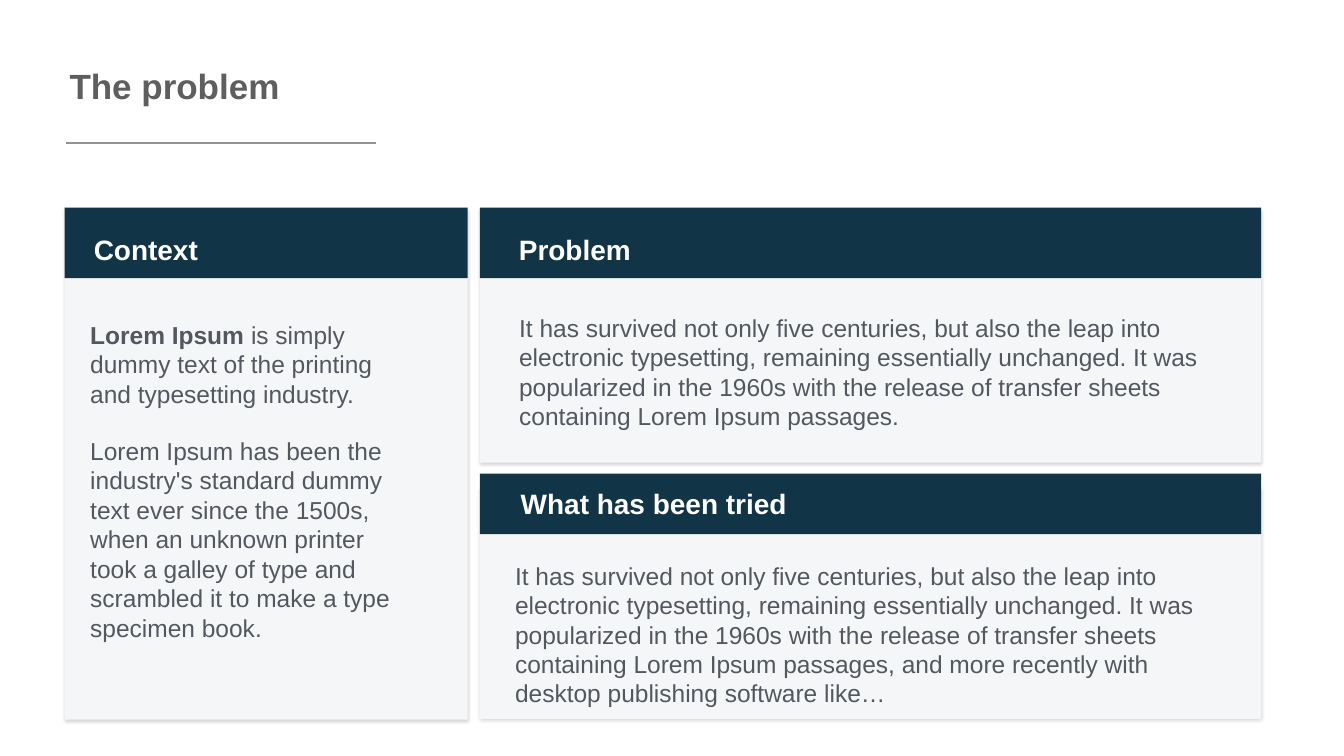
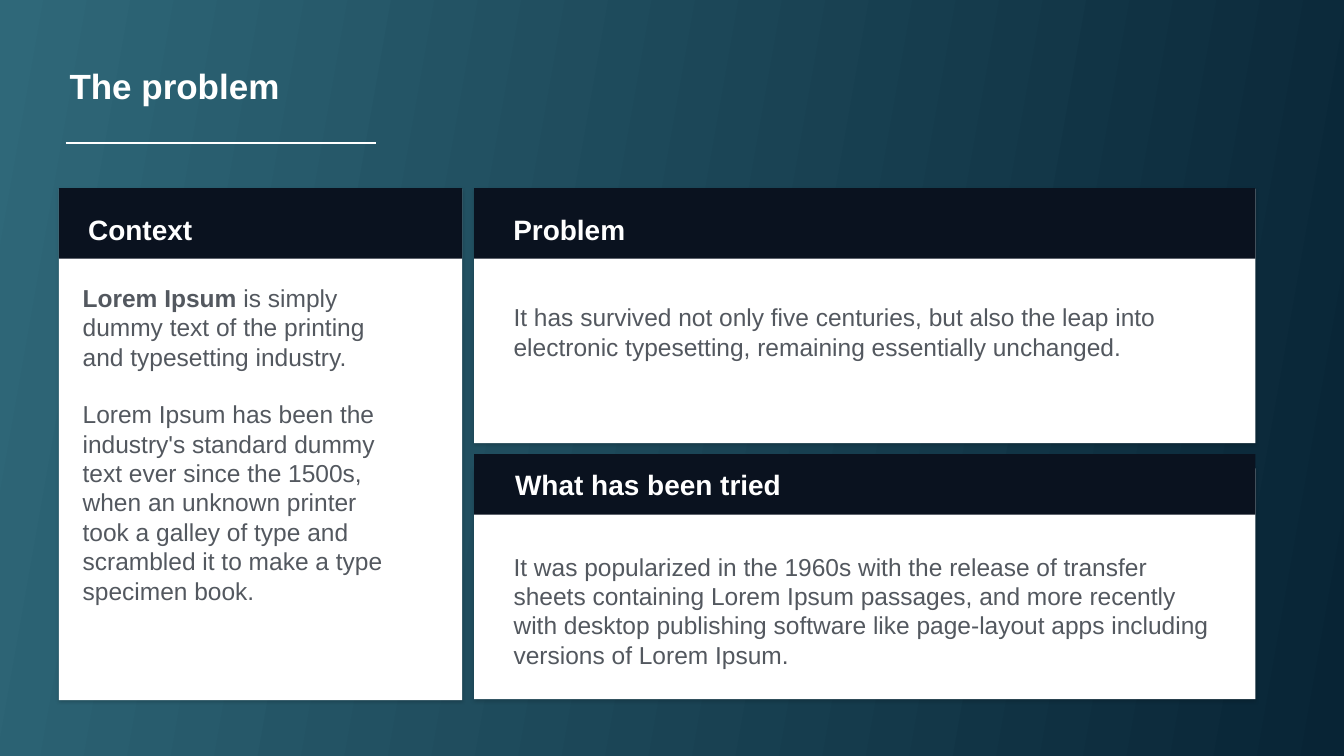
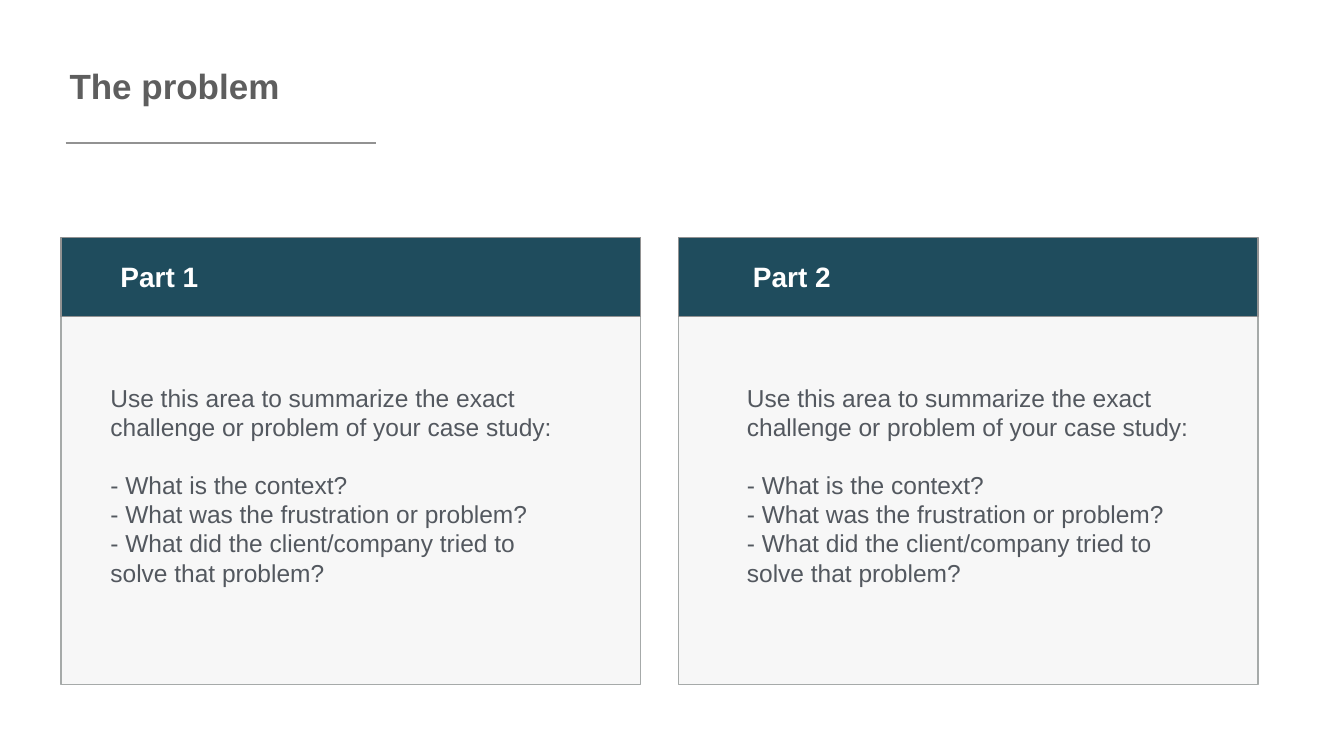
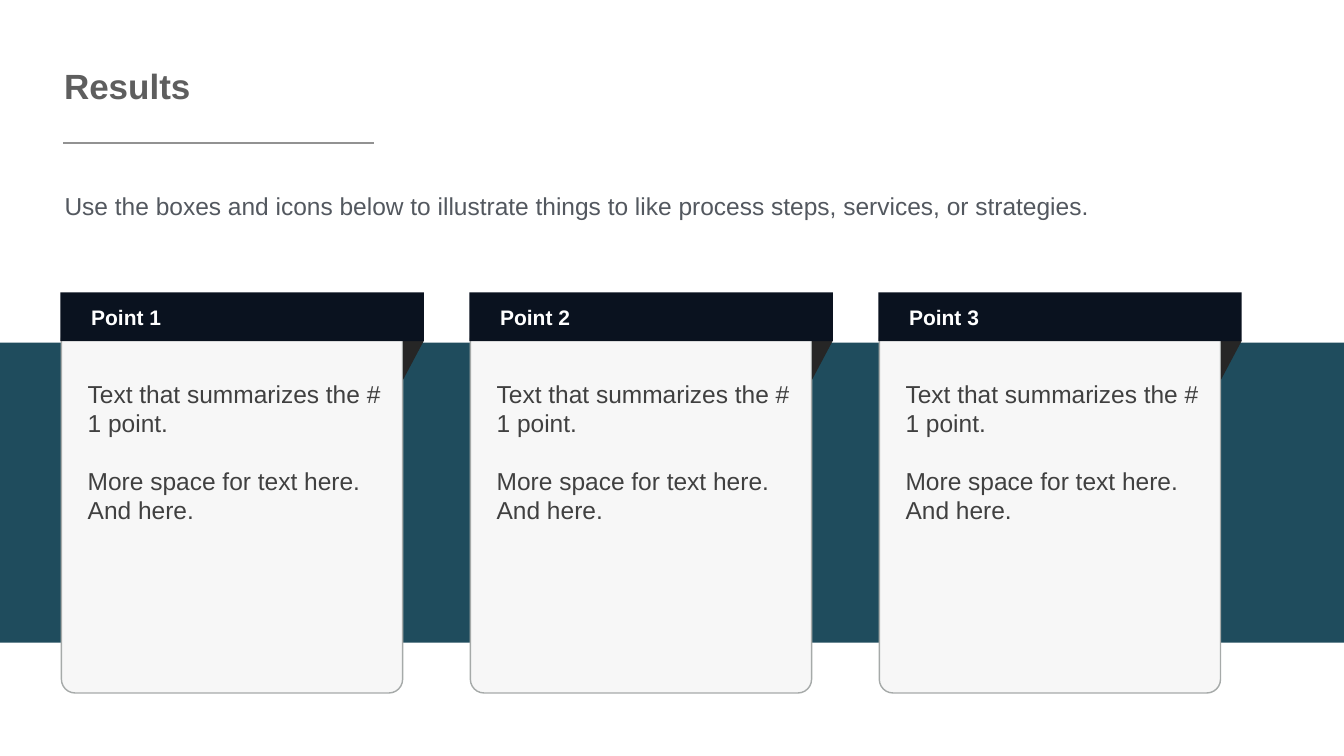
"""Build four case-study slides: three problem layouts and one results layout."""
from dataclasses import dataclass
from typing import NamedTuple

from lxml import etree
from pptx import Presentation
from pptx.dml.color import RGBColor
from pptx.enum.shapes import MSO_CONNECTOR, MSO_SHAPE
from pptx.enum.text import MSO_ANCHOR, MSO_AUTO_SIZE
from pptx.oxml.ns import qn
from pptx.shapes.autoshape import Shape
from pptx.shapes.shapetree import GroupShapes, SlideShapes
from pptx.slide import Slide
from pptx.util import Pt

RECT = MSO_SHAPE.RECTANGLE
ROUNDED = MSO_SHAPE.ROUNDED_RECTANGLE
STRAIGHT = MSO_CONNECTOR.STRAIGHT
TOP = MSO_ANCHOR.TOP
MIDDLE = MSO_ANCHOR.MIDDLE
GROW = MSO_AUTO_SIZE.SHAPE_TO_FIT_TEXT
FIXED = MSO_AUTO_SIZE.NONE

Shapes = SlideShapes | GroupShapes


def rgb(value: str) -> RGBColor:
    """Return the colour of a hex value."""
    return RGBColor.from_string(value)


@dataclass(frozen=True)
class Theme:
    """Colours, type sizes and measures shared by all slides."""

    white: RGBColor = rgb("FFFFFF")
    title: RGBColor = rgb("5E5E5E")
    rule: RGBColor = rgb("929292")
    outline: RGBColor = rgb("A6AAA9")
    text: RGBColor = rgb("53585F")
    card_text: RGBColor = rgb("404040")
    pale: RGBColor = rgb("F5F6F8")
    card: RGBColor = rgb("F7F7F7")
    navy: RGBColor = rgb("113446")
    teal: RGBColor = rgb("1F4C5D")
    ink: RGBColor = rgb("0A121F")
    fold: RGBColor = rgb("262626")
    light_end: RGBColor = rgb("2F6879")
    dark_end: RGBColor = rgb("082435")
    font: str = "Arial"
    title_size: float = 50
    heading_size: float = 40
    body_size: float = 35
    label_size: float = 30
    line_width: float = 2
    gap: float = 40.25
    body_inset: float = 3.6
    heading_inset: float = 5.76


T = Theme()
WIDTH, HEIGHT = 1920, 1080


class Box(NamedTuple):
    """A rectangle in points."""

    x: float
    y: float
    w: float
    h: float


class Run(NamedTuple):
    """A stretch of text."""

    text: str
    bold: bool = False


class Para(NamedTuple):
    """A paragraph of runs and the space before it."""

    runs: tuple[Run, ...]
    before: float = 0


@dataclass(frozen=True)
class Style:
    """The look of the text in a box."""

    size: float
    color: RGBColor
    bold: bool = False
    anchor: MSO_ANCHOR = MIDDLE
    fits: bool = False


@dataclass(frozen=True)
class Panel:
    """A titled panel placed relative to the board's corner."""

    heading: str
    x: float
    y: float
    w: float
    head_h: float
    body_dy: float
    body_h: float
    heading_w: float
    heading_dx: float
    heading_dy: float


@dataclass(frozen=True)
class Passage:
    """The text that fills one panel."""

    box: Box
    paras: tuple[Para, ...]
    foot: float = 0


@dataclass(frozen=True)
class Board:
    """A set of panels with its corner, colours and passages."""

    x: float
    y: float
    head: RGBColor
    body: RGBColor
    passages: tuple[Passage, ...]


class Part(NamedTuple):
    """One half of the two-part slide."""

    heading: str
    x: float
    heading_x: float
    text_x: float


BODY = Style(T.body_size, T.text)
HEADING = Style(T.heading_size, T.white, bold=True, fits=True)
CARD_BODY = Style(T.body_size, T.card_text, anchor=TOP)
CARD_LABEL = Style(T.label_size, T.white, bold=True, anchor=TOP)


def plain(text: str, before: float = 0) -> Para:
    """Return a paragraph of one run."""
    return Para((Run(text),), before)


PANELS = (
    Panel("Context", 0, 0, 576, 100.8, 0.7, 730.8, 161.3, 36, 32),
    Panel("Problem", 593.3, 0, 1116, 100.8, 0.7, 363.6, 172, 50, 32),
    Panel("What has been tried", 593.3, 380.2, 1116, 86.4, 20.2, 329.8, 392.4, 52.6, 15.5),
)
CONTEXT = (
    Para((Run("Lorem Ipsum", True),
          Run(" is simply dummy text of the printing and typesetting industry."))),
    plain("Lorem Ipsum has been the industry's standard dummy text ever since the 1500s, "
          "when an unknown printer took a galley of type and scrambled it to make a type "
          "specimen book.", T.gap),
)
SURVIVED = ("It has survived not only five centuries, but also the leap into electronic "
            "typesetting, remaining essentially unchanged.")
POPULAR = ("It was popularized in the 1960s with the release of transfer sheets "
           "containing Lorem Ipsum passages")
RECENT = ", and more recently with desktop publishing software like"

LIGHT_BOARD = Board(92.2, 296.6, T.navy, T.pale, (
    Passage(Box(125.3, 416.9, 442.8, 540), CONTEXT),
    Passage(Box(738, 437.8, 992.2, 185.8), (plain(f"{SURVIVED} {POPULAR}."),)),
    Passage(Box(732.2, 779, 1023.1, 254.2), (plain(f"{SURVIVED} {POPULAR}{RECENT}…"),)),
))
DARK_BOARD = Board(84.2, 268.6, T.ink, T.white, (
    Passage(Box(114.5, 364.3, 442.8, 540), CONTEXT),
    Passage(Box(730.1, 409.7, 992.2, 185.8), (plain(SURVIVED),), foot=58),
    Passage(Box(730.1, 766.8, 1023.1, 210.2),
            (plain(f"{POPULAR}{RECENT} page-layout apps including versions of Lorem Ipsum."),)),
))
PARTS = (
    Part("Part 1", 87.1, 166.3, 154.1),
    Part("Part 2", 969.1, 1069.9, 1063.4),
)
QUESTIONS = (
    plain("Use this area to summarize the exact challenge or problem of your case study:"),
    plain("- What is the context?", T.gap),
    plain("- What was the frustration or problem?"),
    plain("- What did the client/company tried to solve that problem?"),
)
CARD_COUNT = 3
CARD_STEP = 584.2
CARD_PARAS = (
    plain("Text that summarizes the # 1 point."),
    plain("More space for text here. And here.", T.gap),
)


def add_box(shapes: Shapes, box: Box, fill: RGBColor, line: RGBColor | None = None,
            kind: MSO_SHAPE = RECT) -> Shape:
    """Draw a filled shape without a shadow."""
    sp = shapes.add_shape(kind, *(Pt(v) for v in box))
    sp.shadow.inherit = False
    sp.fill.solid()
    sp.fill.fore_color.rgb = fill
    if line is None:
        sp.line.fill.background()
    else:
        sp.line.color.rgb = line
        sp.line.width = Pt(T.line_width)
    return sp


def add_soft_shadow(sp: Shape) -> None:
    """Give a shape a faint shadow below it."""
    effects = sp.element.spPr.find(qn("a:effectLst"))
    shadow = etree.SubElement(effects, qn("a:outerShdw"), blurRad=str(Pt(5)),
                              dist=str(Pt(2)), dir="5400000", rotWithShape="0")
    color = etree.SubElement(shadow, qn("a:srgbClr"), val="000000")
    etree.SubElement(color, qn("a:alpha"), val="17000")


def add_text(shapes: Shapes, box: Box, paras: tuple[Para, ...], style: Style,
             foot: float = 0) -> None:
    """Write paragraphs into a text box."""
    tf = shapes.add_textbox(*(Pt(v) for v in box)).text_frame
    tf.word_wrap = not style.fits
    tf.auto_size = GROW if style.fits else FIXED
    tf.vertical_anchor = style.anchor
    inset = T.heading_inset if style.fits else T.body_inset
    tf.margin_left = tf.margin_right = tf.margin_top = Pt(inset)
    tf.margin_bottom = Pt(inset + foot)
    for i, para in enumerate(paras):
        p = tf.add_paragraph() if i else tf.paragraphs[0]
        if para.before:
            p.space_before = Pt(para.before)
        for run in para.runs:
            r = p.add_run()
            r.text = run.text
            r.font.name = T.font
            r.font.size = Pt(style.size)
            r.font.bold = style.bold or run.bold
            r.font.color.rgb = style.color


def add_title(s: Slide, text: str, color: RGBColor = T.title, rule: RGBColor = T.rule,
              x: float = 93.6, w: float = 312.5, rule_x: float = 93.6) -> None:
    """Write the slide title with the rule below it."""
    style = Style(T.title_size, color, bold=True, fits=True)
    add_text(s.shapes, Box(x, 87.8, w, 67.7), (plain(text),), style)
    line = s.shapes.add_connector(STRAIGHT, Pt(rule_x), Pt(204.5), Pt(rule_x + 443), Pt(204.5))
    line.line.color.rgb = rule
    line.line.width = Pt(T.line_width)
    etree.SubElement(line.element.spPr, qn("a:effectLst"))


def add_board(s: Slide, board: Board) -> None:
    """Draw the three panels of a board with their passages."""
    for panel, passage in zip(PANELS, board.passages):
        x, y = board.x + panel.x, board.y + panel.y
        body = Box(x, y + panel.body_dy, panel.w, panel.body_h)
        add_soft_shadow(add_box(s.shapes, body, board.body))
        add_box(s.shapes, Box(x, y, panel.w, panel.head_h), board.head)
        heading = Box(x + panel.heading_dx, y + panel.heading_dy, panel.heading_w, 54.7)
        add_text(s.shapes, heading, (plain(panel.heading),), HEADING)
        add_text(s.shapes, passage.box, passage.paras, BODY, passage.foot)


def add_gradient(s: Slide) -> None:
    """Cover the slide with the dark gradient."""
    sp = add_box(s.shapes, Box(0, 0, WIDTH, HEIGHT), T.dark_end)
    sp.fill.gradient()
    sp.fill.gradient_angle = 350
    for stop, color in zip(sp.fill.gradient_stops, (T.light_end, T.dark_end)):
        stop.color.rgb = color


def add_part(s: Slide, part: Part) -> None:
    """Draw one outlined part with its heading and questions."""
    add_box(s.shapes, Box(part.x, 452.2, 828, 525.6), T.card, T.outline)
    add_box(s.shapes, Box(part.x, 339.1, 828, 113), T.teal, T.rule)
    add_text(s.shapes, Box(part.heading_x, 368, 123, 54.7), (plain(part.heading),), HEADING)
    add_text(s.shapes, Box(part.text_x, 533.5, 639.4, 318.2), QUESTIONS, BODY)


def add_card(s: Slide, index: int) -> None:
    """Draw one result card with its folded banner."""
    dx = index * CARD_STEP
    shapes = s.shapes.add_group_shape().shapes
    card = add_box(shapes, Box(87.8 + dx, 464.4, 487.4, 525.6), T.card, T.outline, ROUNDED)
    card.adjustments[0] = 0.04
    builder = shapes.build_freeform(Pt(576 + dx), Pt(486.7))
    builder.add_line_segments([(Pt(576 + dx), Pt(542.2)), (Pt(605.5 + dx), Pt(486.7))])
    fold = builder.convert_to_shape()
    fold.shadow.inherit = False
    fold.fill.solid()
    fold.fill.fore_color.rgb = T.fold
    fold.line.fill.background()
    add_box(shapes, Box(86.4 + dx, 417.6, 519.1, 69.8), T.ink)
    add_text(shapes, Box(121.7 + dx, 537.8, 429.1, 393.1), CARD_PARAS, CARD_BODY)
    label = (plain(f"Point {index + 1}"),)
    add_text(shapes, Box(126.7 + dx, 431.3, 194.4, 62.6), label, CARD_LABEL)


def build_light_problem(s: Slide) -> None:
    """Fill the light problem slide."""
    add_title(s, "The problem")
    add_board(s, LIGHT_BOARD)


def build_dark_problem(s: Slide) -> None:
    """Fill the dark problem slide."""
    add_gradient(s)
    add_board(s, DARK_BOARD)
    add_title(s, "The problem", T.white, T.white)


def build_two_parts(s: Slide) -> None:
    """Fill the two-part problem slide."""
    add_title(s, "The problem")
    for part in PARTS:
        add_part(s, part)


def build_results(s: Slide) -> None:
    """Fill the results slide."""
    add_box(s.shapes, Box(0, 489.6, WIDTH, 428.4), T.teal)
    add_title(s, "Results", x=85.7, w=193, rule_x=90.7)
    intro = plain("Use the boxes and icons below to illustrate things to like process steps, "
                  "services, or strategies.")
    add_text(s.shapes, Box(88.6, 217.4, 1683.4, 154.1), (intro,), BODY)
    for index in range(CARD_COUNT):
        add_card(s, index)


def main() -> None:
    """Build and save the presentation."""
    prs = Presentation()
    prs.slide_width, prs.slide_height = Pt(WIDTH), Pt(HEIGHT)
    blank = prs.slide_layouts[6]
    for build in (build_light_problem, build_dark_problem, build_two_parts, build_results):
        build(prs.slides.add_slide(blank))
    prs.save("out.pptx")


if __name__ == "__main__":
    main()
